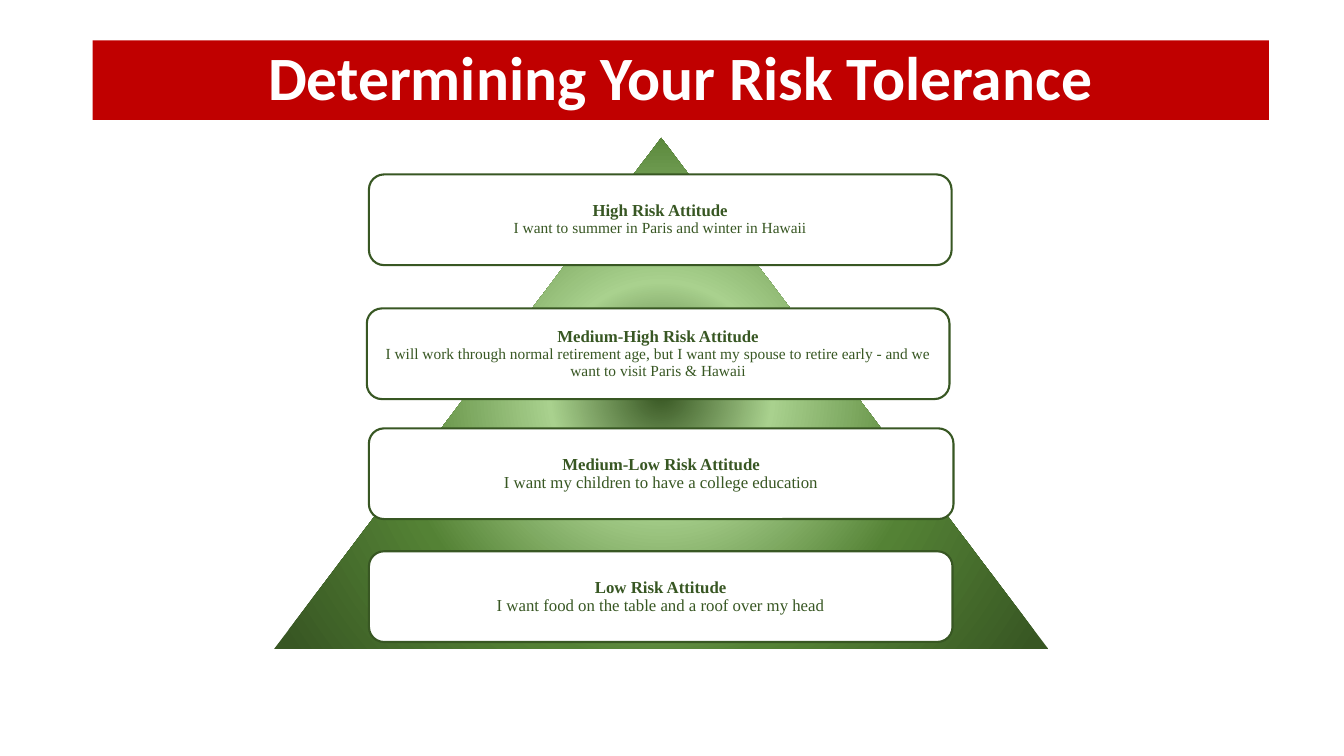
from pptx import Presentation
from pptx.dml.color import RGBColor
from pptx.enum import shapes, text
from pptx.oxml import ns, parse_xml
from pptx.util import Pt

THEME = {
    "banner": "C00000", "white": "FFFFFF", "dark": "385723",
    "pyramid": [(0, "385723"), (24, "A9D18E"), (58, "548235"), (97, "385723")],
    "title_font": "Calibri", "body_font": "Times New Roman",
    "title_size": 44, "heading_size": 12, "small_size": 11,
}
ATTITUDES = [
    (263.5, 124.6, 416.2, "High Risk Attitude",
     "I want to summer in Paris and winter in Hawaii", THEME["small_size"]),
    (262, 220.3, 416.2, "Medium-High Risk Attitude",
     "I will work through normal retirement age, but I want my spouse to retire early - "
     "and we want to visit Paris & Hawaii", THEME["small_size"]),
    (263.5, 306, 417.6, "Medium-Low Risk Attitude",
     "I want my children to have a college education", THEME["heading_size"]),
    (263.5, 393.8, 416.9, "Low Risk Attitude",
     "I want food on the table and a roof over my head", THEME["heading_size"]),
]

prs = Presentation()
prs.slide_width, prs.slide_height = Pt(960), Pt(540)
slide = prs.slides.add_slide(prs.slide_layouts[6])


def add_shape(kind, left, top, width, height, fill=None):
    s = slide.shapes.add_shape(kind, Pt(left), Pt(top), Pt(width), Pt(height))
    s.shadow.inherit = False
    s.line.fill.background()
    if fill:
        s.fill.solid()
        s.fill.fore_color.rgb = RGBColor.from_string(fill)
    return s


def write(s, content, font, styles, color):
    tf = s.text_frame
    tf.word_wrap = True
    tf.vertical_anchor = text.MSO_ANCHOR.MIDDLE
    p = tf.paragraphs[0]
    p.text = content
    p.alignment = text.PP_ALIGN.CENTER
    p.line_spacing = 0.9
    for r, (size, bold) in zip(p.runs, styles):
        r.font.name = font
        r.font.size = Pt(size)
        r.font.bold = bold
        r.font.color.rgb = RGBColor.from_string(color)


banner = add_shape(shapes.MSO_SHAPE.RECTANGLE, 66.2, 28.8, 840.2, 56.9, THEME["banner"])
write(banner, "Determining Your Risk Tolerance", THEME["title_font"],
      [(THEME["title_size"], True)], THEME["white"])

pyramid = add_shape(shapes.MSO_SHAPE.ISOSCELES_TRIANGLE, 195.8, 98.6, 553, 365)
stops = "".join(f'<a:gs pos="{pos * 1000}"><a:srgbClr val="{color}"/></a:gs>'
                for pos, color in THEME["pyramid"])
gradient = parse_xml(
    f'<a:gradFill {ns.nsdecls("a")} rotWithShape="1"><a:gsLst>{stops}</a:gsLst>'
    '<a:path path="circle"><a:fillToRect l="50000" t="50000" r="50000" b="50000"/></a:path>'
    '</a:gradFill>')
pyramid._element.spPr.find(ns.qn("a:prstGeom")).addnext(gradient)

for left, top, width, heading, quote, quote_size in ATTITUDES:
    box = add_shape(shapes.MSO_SHAPE.ROUNDED_RECTANGLE, left, top, width, 64.8, THEME["white"])
    box.line.color.rgb = RGBColor.from_string(THEME["dark"])
    box.line.width = Pt(1.5)
    tf = box.text_frame
    tf.margin_left = tf.margin_right = tf.margin_top = tf.margin_bottom = Pt(3.6)
    write(box, f"{heading}\n{quote}", THEME["body_font"],
          [(THEME["heading_size"], True), (quote_size, False)], THEME["dark"])

prs.save("out.pptx")
